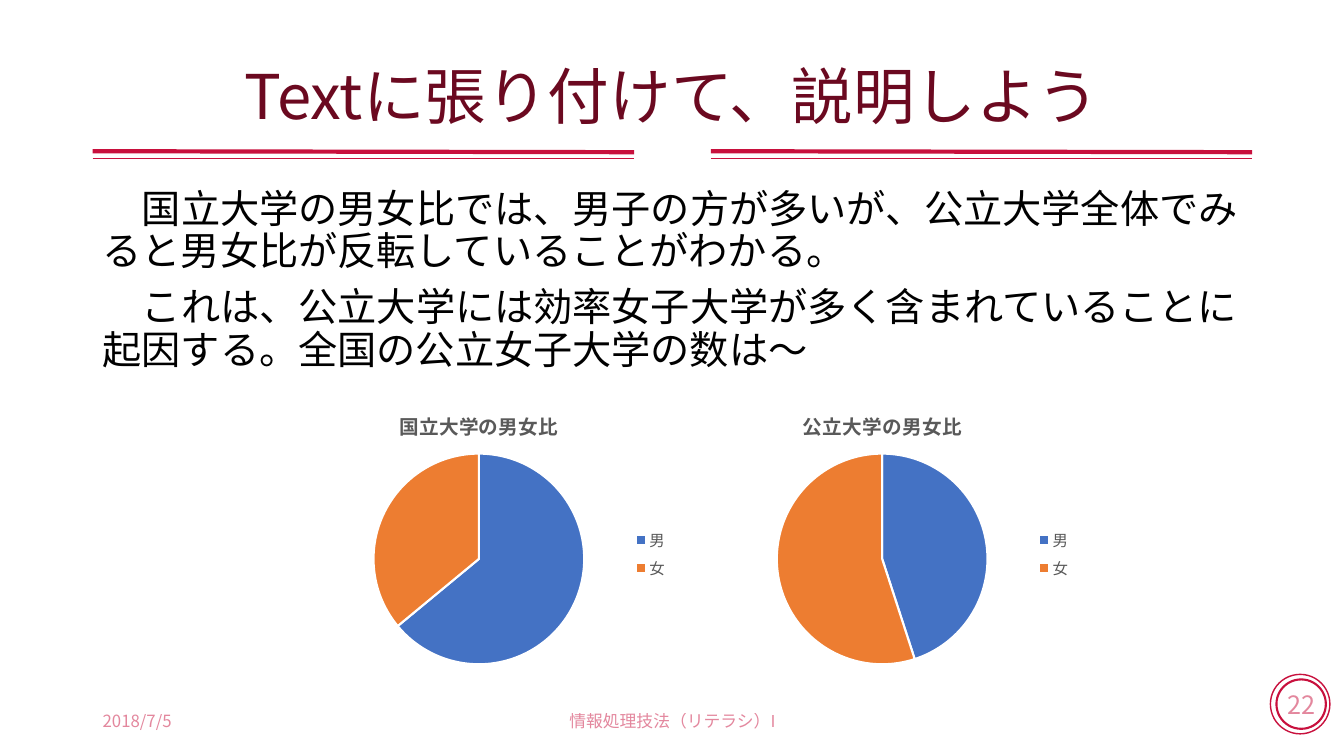
"""Build the slide about explaining two gender-ratio pie charts in a document."""
from lxml import etree
from pptx import Presentation, util as u
from pptx.chart.data import CategoryChartData
from pptx.dml.color import RGBColor
from pptx.enum import chart as charts, shapes, text
from pptx.oxml.ns import qn

FONT = "Noto Sans CJK JP"
CRIMSON = "C8103D"
rgb = RGBColor.from_string


def write(frame, lines, size, color, alpha=100, align="LEFT", anchor="MIDDLE", wrap=True, indent=0, **spacing):
    """Fill a text frame with one styled paragraph per line."""
    frame.word_wrap = wrap
    frame.vertical_anchor = text.MSO_ANCHOR[anchor]
    for number, line in enumerate(lines):
        para = frame.add_paragraph() if number else frame.paragraphs[0]
        para.alignment = text.PP_ALIGN[align]
        for name, value in spacing.items():
            if number or name != "space_before":
                setattr(para, name, value)
        if indent:
            para._p.get_or_add_pPr().set("indent", str(indent))
        span = para.add_run()
        span.text = line
        for name, value in {"name": FONT, "size": u.Pt(size)}.items():
            setattr(span.font, name, value)
        span.font.color.rgb = rgb(color)
        span.font._element.find(qn("a:latin")).addnext(etree.Element(qn("a:ea"), typeface=FONT))
        if alpha < 100:
            shade = span.font._element.find(".//" + qn("a:srgbClr"))
            etree.SubElement(shade, qn("a:alpha"), val=str(alpha * 1000))


def arrange(part, index, **fractions):
    """Give a chart part a manual layout in fractions of the chart area."""
    for old in part.findall(qn("c:layout")):
        part.remove(old)
    layout = etree.Element(qn("c:layout"))
    manual = etree.SubElement(layout, qn("c:manualLayout"))
    if index == 0:
        etree.SubElement(manual, qn("c:layoutTarget"), val="inner")
    for name in ("x", "y"):
        etree.SubElement(manual, qn(f"c:{name}Mode"), val="edge")
    for name, value in fractions.items():
        etree.SubElement(manual, qn(f"c:{name}"), val=str(value))
    part.insert(index, layout)


deck = Presentation()
deck.slide_width, deck.slide_height = u.Inches(13.33), u.Inches(7.5)
page = deck.slides.add_slide(deck.slide_layouts[6])

for left, top, size, width in [(12.6, 6.69, 0.59, 1), (12.66, 6.74, 0.49, 1.5)]:
    ring = page.shapes.add_shape(shapes.MSO_SHAPE.OVAL, *map(u.Inches, (left, top, size, size)))
    ring.shadow.inherit = False
    ring.fill.background()
    ring.line.color.rgb = rgb(CRIMSON)
    ring.line.width = u.Pt(width)
for side in ("left", "right", "top", "bottom"):
    setattr(ring.text_frame, f"margin_{side}", 0)
write(ring.text_frame, ["22"], 18, CRIMSON, 50, "CENTER", wrap=False)

for left in (7.05, 0.92):
    for top, bottom, width in [(1.5, 1.51, 3), (1.57, 1.57, 1)]:
        rule = page.shapes.add_connector(
            shapes.MSO_CONNECTOR.STRAIGHT, *map(u.Inches, (left, top, left + 5.37, bottom)))
        rule.line.color.rgb = rgb(CRIMSON)
        rule.line.width = u.Pt(width)
        etree.SubElement(rule._element.spPr, qn("a:effectLst"))

texts = [
    ((0.92, 0.4, 11.5, 1.17), ["Textに張り付けて、説明しよう"],
     dict(size=44, color="6B0920", align="CENTER", line_spacing=0.9)),
    ((0.92, 1.83, 11.5, 4.93),
     ["国立大学の男女比では、男子の方が多いが、公立大学全体でみると男女比が反転していることがわかる。",
      "これは、公立大学には効率女子大学が多く含まれていることに起因する。全国の公立女子大学の数は～"],
     dict(size=28, color="000000", anchor="TOP", indent=u.Inches(0.39),
          line_spacing=0.9, space_before=u.Pt(10))),
    ((0.92, 6.95, 3, 0.4), ["2018/7/5"], dict(size=12, color=CRIMSON, alpha=50)),
    ((4.42, 6.95, 4.5, 0.4), ["情報処理技法（リテラシ）I"],
     dict(size=12, color=CRIMSON, alpha=50, align="CENTER")),
]
for place, lines, style in texts:
    box = page.shapes.add_textbox(*map(u.Inches, place))
    write(box.text_frame, lines, **style)

for left, title, shares in [(2, "国立大学の男女比", (64, 36)), (6, "公立大学の男女比", (45, 55))]:
    data = CategoryChartData()
    data.categories = ["男", "女"]
    data.add_series("Series 1", shares)
    pie = page.shapes.add_chart(
        charts.XL_CHART_TYPE.PIE, *map(u.Inches, (left, 3.83, 5.5, 3.3)), data).chart
    pie.font.name = FONT
    pie.font.size = u.Pt(10)
    pie.font.color.rgb = rgb("000000")
    write(pie.chart_title.text_frame, [title], 14, "595959", align="CENTER")
    pie.has_legend = True
    pie.legend.position = charts.XL_LEGEND_POSITION.RIGHT
    pie.legend.include_in_layout = False
    for name, value in {"name": FONT, "size": u.Pt(11)}.items():
        setattr(pie.legend.font, name, value)
    pie.legend.font.color.rgb = rgb("595959")
    pie.plots[0].vary_by_categories = True
    for number, color in enumerate(("4472C4", "ED7D31")):
        piece = pie.plots[0].series[0].points[number].format
        piece.fill.solid()
        piece.fill.fore_color.rgb = rgb(color)
        piece.line.color.rgb = rgb("FFFFFF")
        piece.line.width = u.Pt(1.5)
    root = pie._chartSpace.find(qn("c:chart"))
    arrange(root.find(qn("c:title")), 1, x=0.35, y=0.06)
    arrange(root.find(qn("c:plotArea")), 0, x=0.31, y=0.2, w=0.38, h=0.64)
    arrange(root.find(qn("c:legend")), 1, x=0.77, y=0.41, w=0.08, h=0.19)
    for latin in pie._chartSpace.findall(".//" + qn("a:latin")):
        if latin.getparent().find(qn("a:ea")) is None:
            latin.addnext(etree.Element(qn("a:ea"), typeface=FONT))

deck.save("out.pptx")
